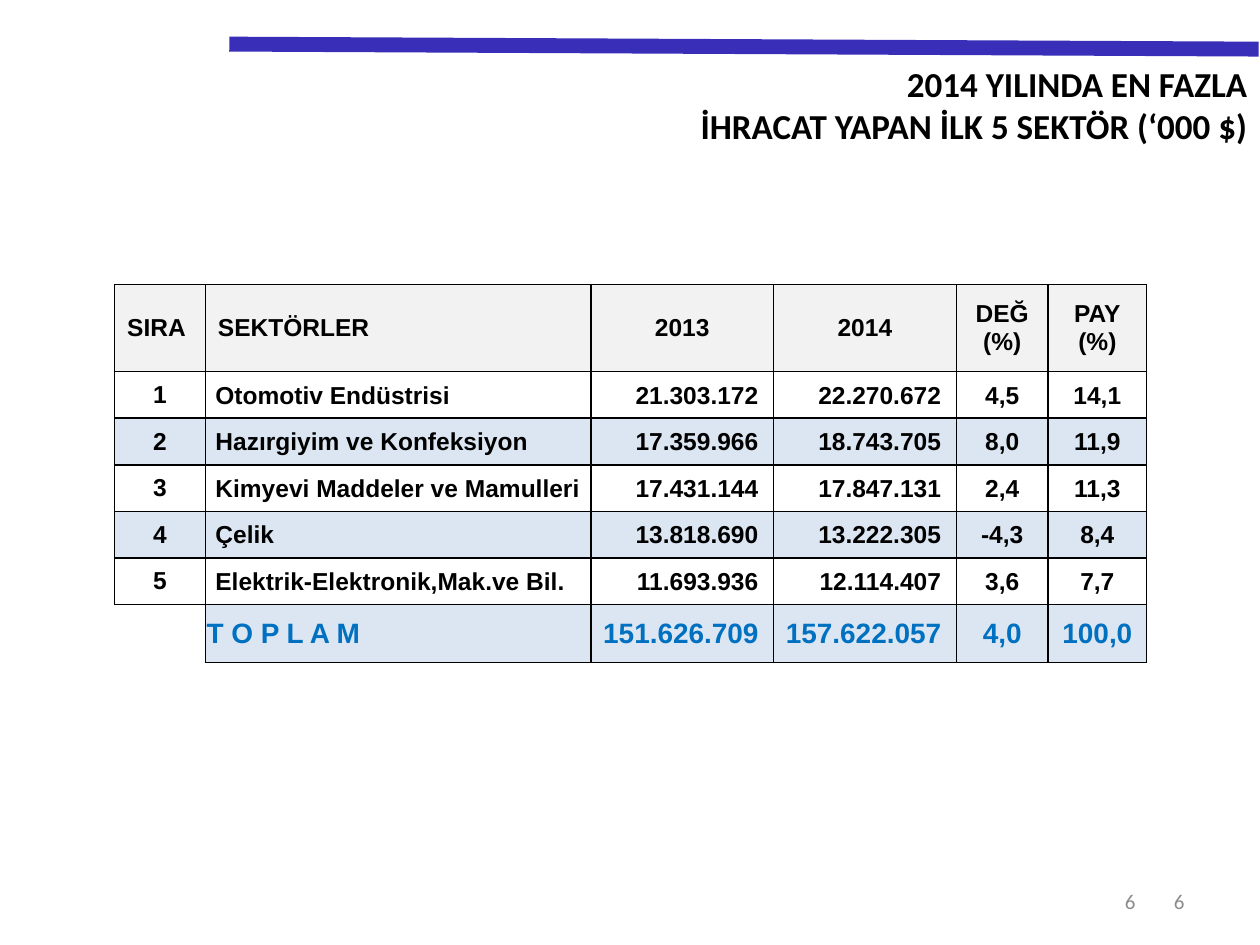
from lxml import etree
from pptx import Presentation, util as u
from pptx.dml.color import RGBColor
from pptx.enum import shapes, text
from pptx.oxml.ns import qn

TITLE = ["2014 YILINDA EN FAZLA", "İHRACAT YAPAN İLK 5 SEKTÖR (‘000 $)"]
HEADER = ["SIRA", "SEKTÖRLER", "2013", "2014", "DEĞ\n(%)", "PAY\n(%)"]
SECTORS = [
    ["1", "Otomotiv Endüstrisi", "21.303.172", "22.270.672", "4,5", "14,1"],
    ["2", "Hazırgiyim ve Konfeksiyon", "17.359.966", "18.743.705", "8,0", "11,9"],
    ["3", "Kimyevi Maddeler ve Mamulleri", "17.431.144", "17.847.131", "2,4", "11,3"],
    ["4", "Çelik", "13.818.690", "13.222.305", "-4,3", "8,4"],
    ["5", "Elektrik-Elektronik,Mak.ve Bil.", "11.693.936", "12.114.407", "3,6", "7,7"],
]
TOTAL = ["", "T O P L A M", "151.626.709", "157.622.057", "4,0", "100,0"]
PAGE_NUMBERS = [("6", 7.17, 2.33), ("6", 7.01, 2.1)]

COLS = [0.72, 3.06, 1.45, 1.45, 0.73, 0.78]
ROWS = [0.69] + [0.37] * len(SECTORS) + [0.46]
HEADER_ALIGN, BODY_ALIGN = "llcccc", "clrrcc"
ALIGN = {"l": text.PP_ALIGN.LEFT, "c": text.PP_ALIGN.CENTER, "r": text.PP_ALIGN.RIGHT}
INSETS = {"l": (0.08, 0.01), "c": (0.01, 0.01), "r": (0.01, 0.12)}
BLACK, BLUE, GREY, BAR = "000000", "0070C0", "8C8C8C", "382EB8"
HEADER_FILL, BAND_FILL = "F2F2F2", "DCE6F2"


def rgb(value):
    """Turn a hex string into a colour."""
    return RGBColor.from_string(value)


def write(tf, lines, align, font, size, color, bold=True):
    """Fill a text frame with one paragraph for each line."""
    for i, line in enumerate(lines):
        p = tf.paragraphs[0] if i == 0 else tf.add_paragraph()
        p.alignment = ALIGN[align]
        r = p.add_run()
        r.text = line
        r.font.name, r.font.size, r.font.bold = font, u.Pt(size), bold
        r.font.color.rgb = rgb(color)


def add_text(s, box, lines, anchor, size, color, bold):
    """Add a right-aligned text box."""
    tf = s.shapes.add_textbox(*map(u.Inches, box)).text_frame
    tf.word_wrap = True
    tf.vertical_anchor = anchor
    write(tf, lines, "r", "Calibri", size, color, bold)


def set_borders(cell, visible):
    """Draw the named sides of a cell and clear the others."""
    tc_pr = cell._tc.get_or_add_tcPr()
    for side in "LRTB":
        ln = etree.SubElement(tc_pr, qn(f"a:ln{side}"), w=str(u.Pt(1)))
        if side in visible:
            fill = etree.SubElement(ln, qn("a:solidFill"))
            etree.SubElement(fill, qn("a:srgbClr"), val=BLACK)
        else:
            etree.SubElement(ln, qn("a:noFill"))


def style_cell(cell, value, row, col):
    """Write and format one table cell according to its row and column."""
    is_header, is_total = row == 0, row == len(ROWS) - 1
    align = (HEADER_ALIGN if is_header else BODY_ALIGN)[col]
    cell.vertical_anchor = text.MSO_ANCHOR.MIDDLE
    if not is_header and col > 0:
        left, right = INSETS["c" if is_total and align == "l" else align]
        cell.margin_left, cell.margin_right = u.Inches(left), u.Inches(right)
        cell.margin_top, cell.margin_bottom = u.Inches(0.01), 0
    set_borders(cell, "LRTB" if value else "RT")
    if value and (is_header or row % 2 == 0):
        cell.fill.solid()
        cell.fill.fore_color.rgb = rgb(HEADER_FILL if is_header else BAND_FILL)
    else:
        cell.fill.background()
    if value:
        size, color = (16, BLUE) if is_total else (14, BLACK)
        write(cell.text_frame, value.split("\n"), align, "Arial", size, color)


def add_sector_table(s):
    """Add the export table."""
    data = [HEADER, *SECTORS, TOTAL]
    box = (0.91, 2.26, sum(COLS), sum(ROWS))
    table = s.shapes.add_table(len(ROWS), len(COLS), *map(u.Inches, box)).table
    table.first_row = table.horz_banding = False
    for column, width in zip(table.columns, COLS):
        column.width = u.Inches(width)
    for i, (values, height) in enumerate(zip(data, ROWS)):
        table.rows[i].height = u.Inches(height)
        for j, value in enumerate(values):
            style_cell(table.cell(i, j), value, i, j)


def main():
    """Build and save the slide."""
    prs = Presentation()
    prs.slide_width, prs.slide_height = u.Inches(10), u.Inches(7.5)
    s = prs.slides.add_slide(prs.slide_layouts[6])
    bar = s.shapes.add_connector(
        shapes.MSO_CONNECTOR.STRAIGHT, *map(u.Inches, (1.82, 0.35, 9.99, 0.39)))
    bar.line.color.rgb, bar.line.width = rgb(BAR), u.Pt(8.5)
    etree.SubElement(bar._element.spPr, qn("a:effectLst"))
    for number, left, width in PAGE_NUMBERS:
        add_text(s, (left, 6.95, width, 0.4), [number],
                 text.MSO_ANCHOR.MIDDLE, 12, GREY, False)
    add_text(s, (1.06, 0.45, 8.94, 0.77), TITLE, text.MSO_ANCHOR.TOP, 20, BLACK, True)
    add_sector_table(s)
    prs.save("out.pptx")


if __name__ == "__main__":
    main()
